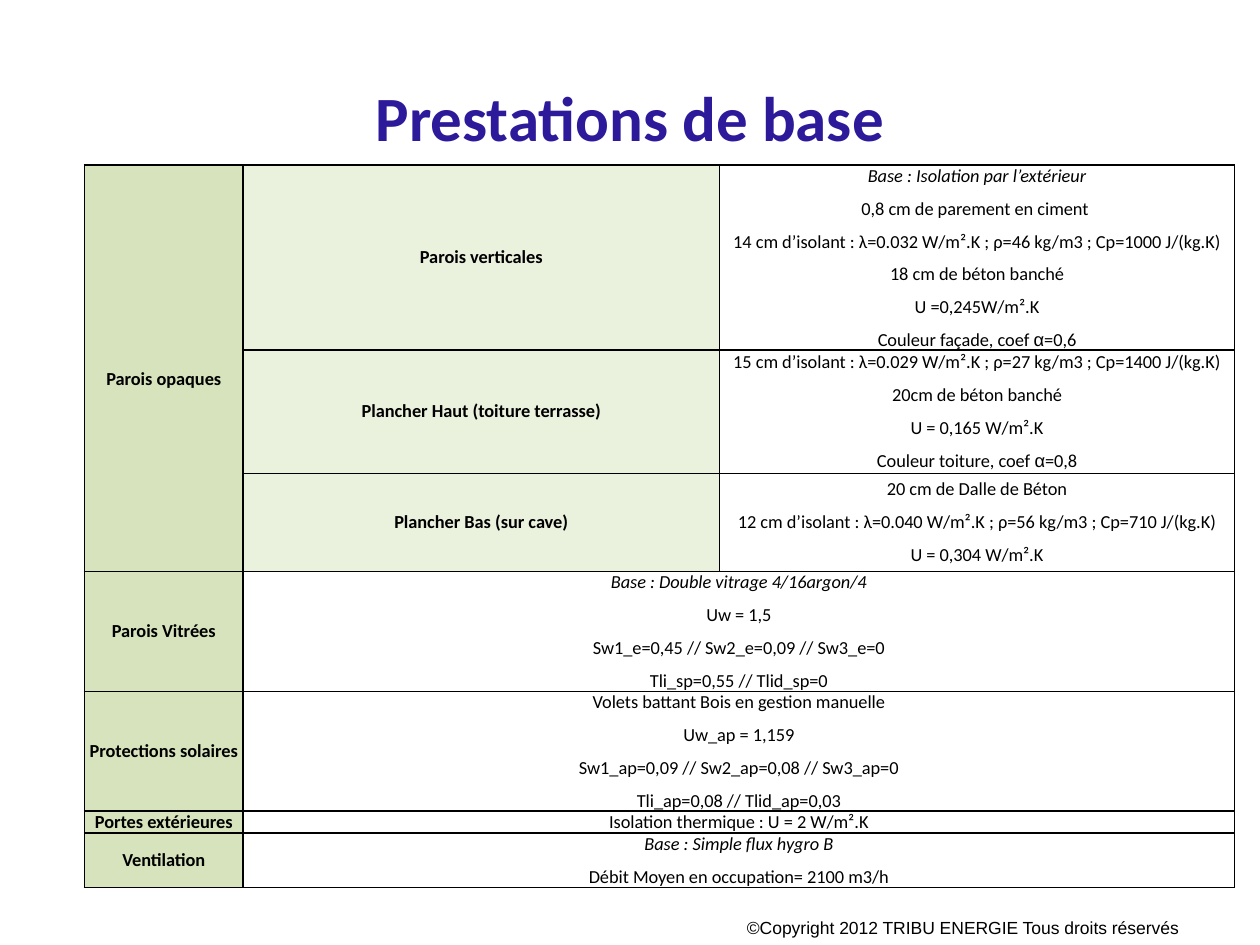
from lxml import etree
from pptx import Presentation
from pptx.dml.color import RGBColor
from pptx.enum.text import MSO_ANCHOR, PP_ALIGN
from pptx.oxml.ns import qn
from pptx.util import Inches, Pt

MIDDLE = MSO_ANCHOR.MIDDLE
CENTER = PP_ALIGN.CENTER
BLACK = RGBColor(0x00, 0x00, 0x00)
WHITE = RGBColor(0xFF, 0xFF, 0xFF)
BLUE = RGBColor(0x2C, 0x1A, 0x9A)
GREEN = RGBColor(0xD6, 0xE3, 0xBC)
PALE = RGBColor(0xEA, 0xF1, 0xDD)

WIDTHS = [1.26, 3.78, 4.09]
HEIGHTS = [1.43, 0.98, 0.78, 0.87, 0.87, 0.13, 0.38]

# Row, column, fill, lines of text
CELLS = [
    (0, 0, GREEN, ["Parois opaques"]),
    (0, 1, PALE, ["Parois verticales"]),
    (0, 2, WHITE, [
        "Base : Isolation par l’extérieur",
        "0,8 cm de parement en ciment ",
        "14 cm d’isolant : λ=0.032 W/m².K ; ρ=46 kg/m3 ; Cp=1000 J/(kg.K)",
        "18 cm de béton banché",
        "U =0,245W/m².K",
        "Couleur façade, coef α=0,6",
    ]),
    (1, 1, PALE, ["Plancher Haut (toiture terrasse)"]),
    (1, 2, WHITE, [
        "15 cm d’isolant : λ=0.029 W/m².K ; ρ=27 kg/m3 ; Cp=1400 J/(kg.K)",
        "20cm de béton banché",
        "U = 0,165 W/m².K",
        "Couleur toiture, coef α=0,8",
    ]),
    (2, 1, PALE, ["Plancher Bas (sur cave)"]),
    (2, 2, WHITE, [
        "20 cm de Dalle de Béton",
        "12 cm d’isolant : λ=0.040 W/m².K ; ρ=56 kg/m3 ; Cp=710 J/(kg.K)",
        "U = 0,304 W/m².K",
    ]),
    (3, 0, GREEN, ["Parois Vitrées"]),
    (3, 1, WHITE, [
        "Base : Double vitrage 4/16argon/4",
        "Uw = 1,5",
        "Sw1_e=0,45 // Sw2_e=0,09 // Sw3_e=0",
        "Tli_sp=0,55 // Tlid_sp=0",
    ]),
    (4, 0, GREEN, ["Protections solaires"]),
    (4, 1, WHITE, [
        "Volets battant Bois en gestion manuelle",
        "Uw_ap = 1,159",
        "Sw1_ap=0,09 // Sw2_ap=0,08 // Sw3_ap=0",
        "Tli_ap=0,08 // Tlid_ap=0,03",
    ]),
    (5, 0, GREEN, ["Portes extérieures"]),
    (5, 1, WHITE, ["Isolation thermique : U = 2 W/m².K"]),
    (6, 0, GREEN, ["Ventilation"]),
    (6, 1, WHITE, [
        "Base : Simple flux hygro B",
        "Débit Moyen en occupation= 2100 m3/h",
    ]),
]


def add_run(para, text, size, face="Calibri", color=BLACK, bold=False, italic=False):
    run = para.add_run()
    run.text = text
    font = run.font
    font.size, font.name, font.bold, font.italic = Pt(size), face, bold, italic
    font.color.rgb = color


def add_edges(cell):
    """Draw a 1 pt black line on each side of the cell."""
    props = cell._tc.get_or_add_tcPr()
    for side in ("a:lnL", "a:lnR", "a:lnT", "a:lnB"):
        line = etree.SubElement(props, qn(side), w=str(Pt(1)))
        fill = etree.SubElement(line, qn("a:solidFill"))
        etree.SubElement(fill, qn("a:srgbClr"), val=str(BLACK))


prs = Presentation()
prs.slide_width, prs.slide_height = Inches(10), Inches(7.5)
slide = prs.slides.add_slide(prs.slide_layouts[5])

# Copyright line
note = slide.shapes.add_textbox(Inches(5.83), Inches(7.23), Inches(4.17), Inches(0.27))
note.text_frame.word_wrap = True
add_run(note.text_frame.paragraphs[0],
        "©Copyright 2012 TRIBU ENERGIE Tous droits réservés", 10, "Arial")

# Title
title = slide.shapes.title
title.left, title.top = Inches(0.5), Inches(0.3)
title.width, title.height = Inches(9), Inches(1.25)
title.text_frame.vertical_anchor = MIDDLE
para = title.text_frame.paragraphs[0]
para.alignment = CENTER
add_run(para, "Prestations de base", 36, color=BLUE, bold=True)

# Table grid
table = slide.shapes.add_table(
    len(HEIGHTS), len(WIDTHS), Inches(0.67), Inches(1.31),
    Inches(sum(WIDTHS)), Inches(sum(HEIGHTS))).table
table.first_row = table.horz_banding = False
for col, width in zip(table.columns, WIDTHS):
    col.width = Inches(width)
for row, height in zip(table.rows, HEIGHTS):
    row.height = Inches(height)
for cell in table.iter_cells():
    add_edges(cell)
    cell.fill.solid()
    cell.fill.fore_color.rgb = WHITE
    cell.margin_left = cell.margin_right = 0
    cell.margin_top = cell.margin_bottom = 0
    cell.vertical_anchor = MIDDLE
    cell.text_frame.paragraphs[0].font.size = Pt(1)

table.cell(0, 0).merge(table.cell(2, 0))
for row in range(3, len(HEIGHTS)):
    table.cell(row, 1).merge(table.cell(row, 2))

# Table text
for row, col, color, lines in CELLS:
    cell = table.cell(row, col)
    cell.fill.fore_color.rgb = color
    frame = cell.text_frame
    for num, line in enumerate(lines):
        para = frame.add_paragraph() if num else frame.paragraphs[0]
        para.alignment = CENTER
        para.space_before = Pt(3 if num else 0)
        para.space_after = Pt(3)
        head, alpha, tail = line.partition("α")
        for text, face in ((head, "Calibri"), (alpha, "Arial"), (tail, "Calibri")):
            if text:
                add_run(para, text, 10.5, face, bold=color != WHITE,
                        italic=line.startswith("Base"))

# The first label sits half a line below the middle
table.cell(0, 0).margin_top = Inches(0.18)

prs.save("out.pptx")
